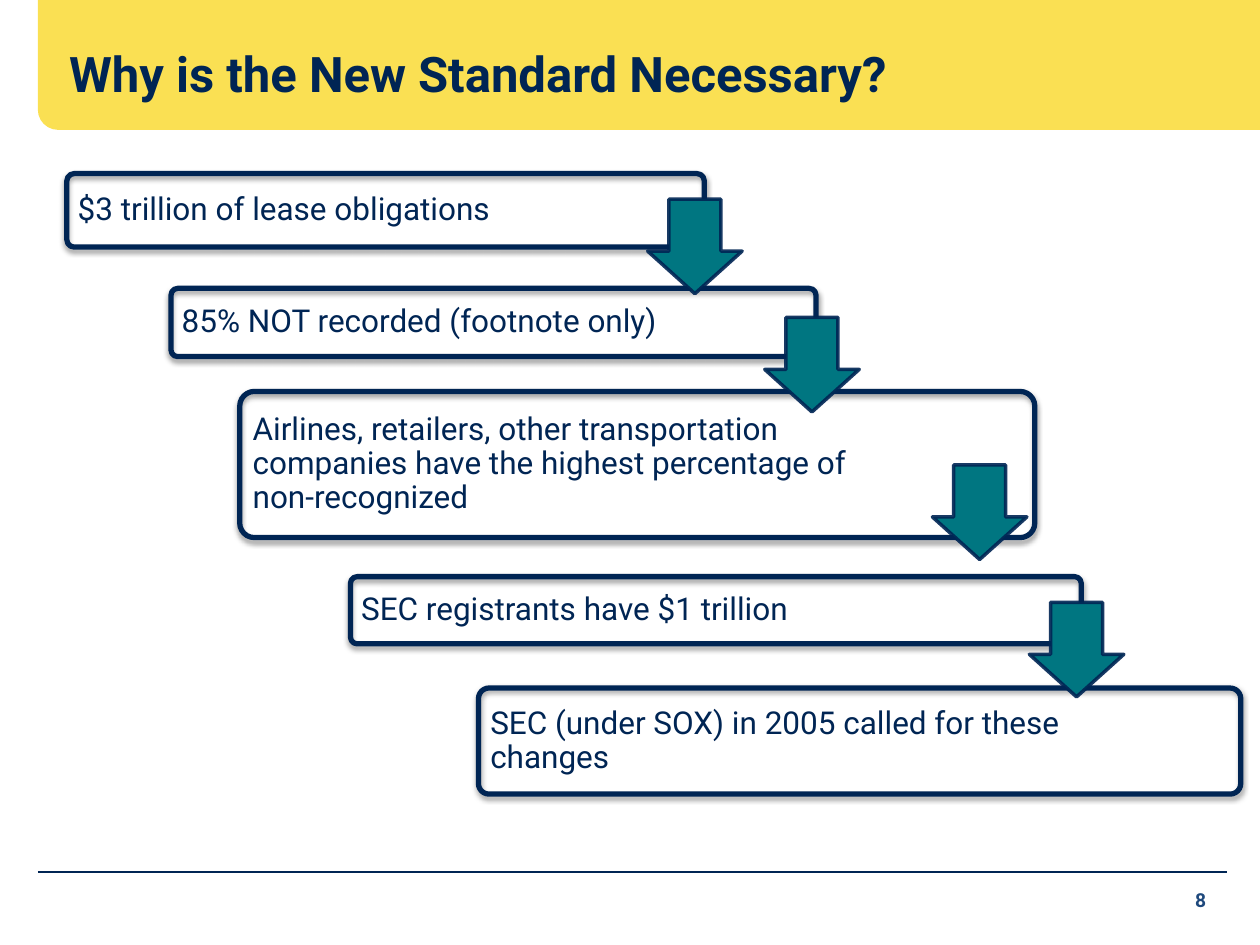
import dataclasses

import pptx
import pptx.dml.color
import pptx.enum.shapes
import pptx.enum.text
import pptx.oxml
import pptx.oxml.ns
import pptx.util
import lxml.etree

Pt = pptx.util.Pt
RGB = pptx.dml.color.RGBColor.from_string
Shape = pptx.enum.shapes.MSO_SHAPE
Anchor = pptx.enum.text.MSO_ANCHOR
Align = pptx.enum.text.PP_ALIGN


@dataclasses.dataclass(frozen=True)
class Theme:
    font: str = "Roboto"
    navy: str = "002554"
    banner: str = "FAE053"
    teal: str = "007681"
    number: str = "1F497D"
    title_size: float = 28
    body_size: float = 18
    number_size: float = 11
    corner: float = 0.1


SHADOW = (
    '<a:effectLst %s><a:outerShdw blurRad="%d" dist="%d" dir="5400000" rotWithShape="0">'
    '<a:srgbClr val="000000"><a:alpha val="38000"/></a:srgbClr></a:outerShdw></a:effectLst>'
    % (pptx.oxml.ns.nsdecls("a"), Pt(3.1), Pt(1.6))
)


class Deck:
    def __init__(self, prs, theme):
        self.theme = theme
        self.s = prs.slides.add_slide(prs.slide_layouts[6])

    def shape(self, kind, at, adjust, fill=None, line=None, width=0):
        sp = self.s.shapes.add_shape(kind, *map(Pt, at))
        sp.shadow.inherit = False
        for i, value in enumerate(adjust):
            sp.adjustments[i] = value
        if fill:
            sp.fill.solid()
            sp.fill.fore_color.rgb = RGB(fill)
        else:
            sp.fill.background()
        if line:
            sp.line.color.rgb = RGB(line)
            sp.line.width = Pt(width)
        else:
            sp.line.fill.background()
        return sp

    def text(self, words, at, size, color, bold=False, anchor=Anchor.TOP,
             align=Align.LEFT, inset=None, spacing=None):
        tf = self.s.shapes.add_textbox(*map(Pt, at)).text_frame
        tf.word_wrap = True
        tf.vertical_anchor = anchor
        if inset is not None:
            tf.margin_left = tf.margin_right = Pt(inset)
            tf.margin_top = tf.margin_bottom = Pt(inset)
        p = tf.paragraphs[0]
        p.text = words
        p.alignment = align
        if spacing:
            p.line_spacing = spacing
        p.font.name = self.theme.font
        p.font.size = Pt(size)
        p.font.bold = bold
        p.font.color.rgb = RGB(color)

    def banner(self, at):
        sp = self.shape(Shape.ROUND_1_RECTANGLE, at, [0.156], fill=self.theme.banner)
        sp.rotation = 180

    def rule(self, x1, x2, y):
        line = self.s.shapes.add_connector(
            pptx.enum.shapes.MSO_CONNECTOR.STRAIGHT, Pt(x1), Pt(y), Pt(x2), Pt(y))
        line.line.color.rgb = RGB(self.theme.navy)
        line.line.width = Pt(1)
        lxml.etree.SubElement(line._element.spPr, pptx.oxml.ns.qn("a:effectLst"))

    def step(self, words, left, top, width, height, text_width):
        t = self.theme
        sp = self.shape(Shape.ROUNDED_RECTANGLE, (left, top, width, height),
                        [t.corner], line=t.navy, width=3)
        spPr = sp._element.spPr
        spPr.replace(spPr.find(pptx.oxml.ns.qn("a:effectLst")), pptx.oxml.parse_xml(SHADOW))
        gap = 0.29 * t.corner * height
        self.text(words, (left + gap, top + gap, text_width, height - 2 * gap),
                  t.body_size, t.navy, anchor=Anchor.MIDDLE, inset=5, spacing=0.9)

    def arrow(self, left, top):
        t = self.theme
        sp = self.shape(Shape.DOWN_ARROW, (left, top, 54, 54), [0.55, 0.45],
                        fill=t.teal, line=t.navy, width=2)
        color = sp.line._ln.find(".//" + pptx.oxml.ns.qn("a:srgbClr"))
        lxml.etree.SubElement(color, pptx.oxml.ns.qn("a:alpha"), val="90000")


STEPS = [
    ("$3 trillion of lease obligations", 38.2, 99.2, 364.3, 42, 299),
    ("85% NOT recorded (footnote only)", 97.7, 164.8, 368.6, 39, 298),
    ("Airlines, retailers, other transportation companies have the highest "
     "percentage of non-recognized", 137, 223.7, 454.3, 83.5, 366),
    ("SEC registrants have $1 trillion", 200.3, 329.5, 417.6, 38.4, 338),
    ("SEC (under SOX) in 2005 called for these changes", 273.4, 393.2, 435.6, 60.6, 353),
]
ARROWS = [(370.1, 113.8), (437, 181.4), (532.8, 265.7), (588.2, 344.2)]


def main():
    prs = pptx.Presentation()
    prs.slide_width, prs.slide_height = Pt(720), Pt(540)
    theme = Theme()
    deck = Deck(prs, theme)

    deck.banner((21.6, 0, 698.4, 74.2))
    deck.rule(21.6, 701.3, 498.2)
    deck.text("Why is the New Standard Necessary?", (32.4, 19.4, 603.4, 44.6),
              theme.title_size, theme.navy, bold=True, anchor=Anchor.MIDDLE)
    for step in STEPS:
        deck.step(*step)
    for arrow in ARROWS:
        deck.arrow(*arrow)
    deck.text("8", (671, 504, 30.2, 23.8), theme.number_size, theme.number,
              bold=True, align=Align.CENTER)
    prs.save("out.pptx")


if __name__ == "__main__":
    main()
